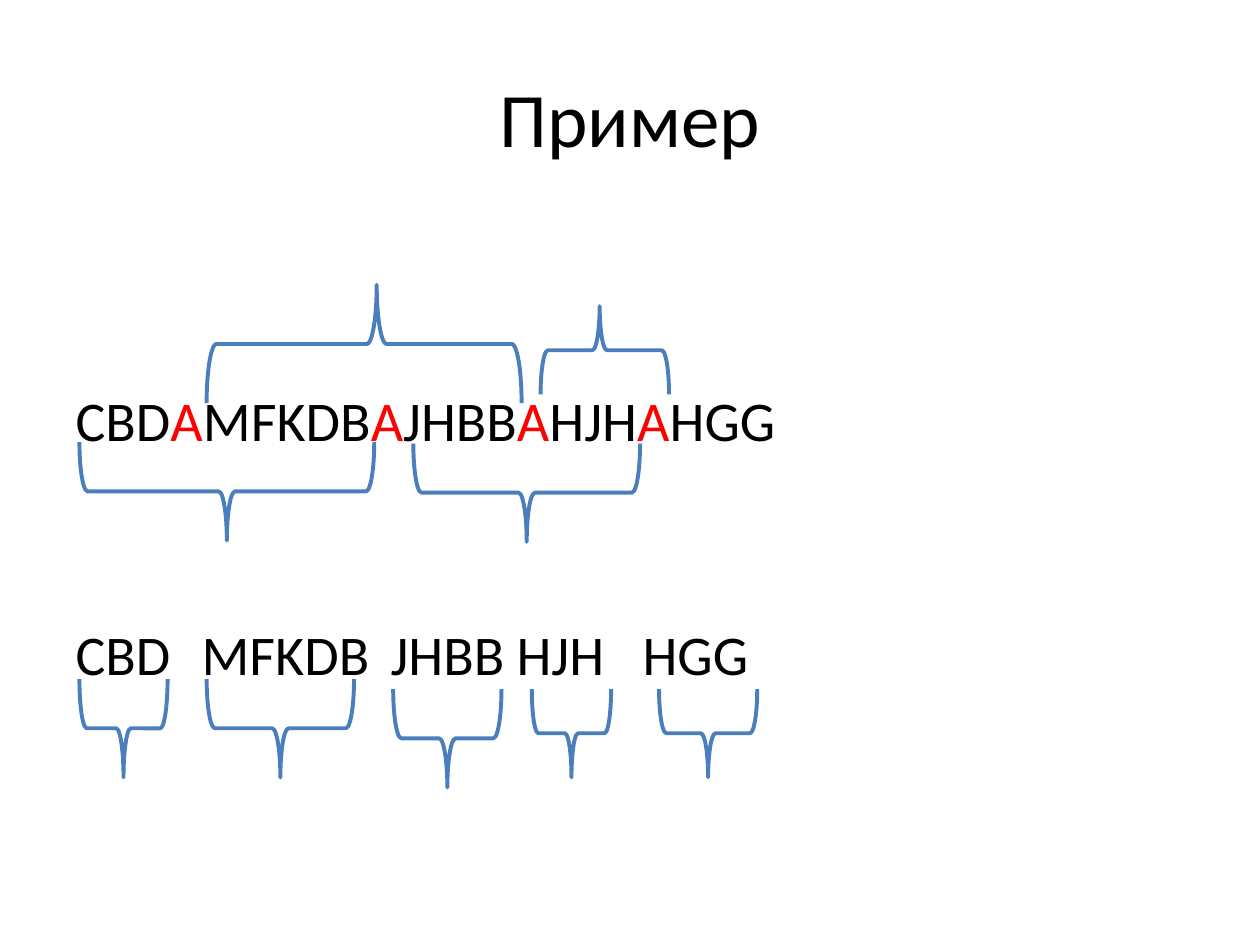
from pptx import Presentation
from pptx.dml.color import RGBColor
from pptx.enum.shapes import MSO_SHAPE
from pptx.enum.text import MSO_ANCHOR, MSO_AUTO_SIZE, PP_ALIGN
from pptx.oxml.ns import qn
from pptx.util import Inches, Pt
from lxml.etree import SubElement

COLORS = {"text": "000000", "separator": "FF0000", "brace": "4B7EBC"}
TITLE = "Пример"
SEPARATOR = "A"
WORDS = ["CBD", "MFKDB", "JHBB", "HJH", "HGG"]
WORD_TABS = [0.94, 2.48, 3.56, 4.56]
SPACE_BETWEEN_LINES = 95.2

DOWN, UP = 90, 270
BRACES = [
    (0.63, 3.51, 2.34, 0.78, DOWN, 0.5),
    (1.64, 2.26, 2.5, 0.94, UP, 0.54),
    (3.28, 3.52, 1.8, 0.78, DOWN, 0.5),
    (4.29, 2.43, 1.02, 0.7, UP, 0.46),
    (0.63, 5.39, 0.7, 0.78, DOWN, 0.5),
    (1.64, 5.39, 1.17, 0.78, DOWN, 0.5),
    (3.12, 5.47, 0.86, 0.78, DOWN, 0.5),
    (4.22, 5.47, 0.63, 0.7, DOWN, 0.5),
    (5.23, 5.47, 0.78, 0.7, DOWN, 0.5),
]


def apply_format(target, values):
    for name, value in values.items():
        setattr(target, name, value)


def place(shape, left, top, width, height):
    apply_format(shape, {
        "left": Inches(left), "top": Inches(top),
        "width": Inches(width), "height": Inches(height),
    })


def add_run(paragraph, text, size, color):
    run = paragraph.add_run()
    run.text = text
    apply_format(run.font, {"size": Pt(size), "name": "Calibri"})
    run.font.color.rgb = RGBColor.from_string(COLORS[color])


def format_plain_line(paragraph, space_before, tabs=()):
    paragraph.space_before = Pt(space_before)
    properties = paragraph._p.get_or_add_pPr()
    properties.set("marL", "0")
    properties.set("indent", "0")
    SubElement(properties, qn("a:buNone"))
    if tabs:
        tab_list = SubElement(properties, qn("a:tabLst"))
        for position in tabs:
            SubElement(tab_list, qn("a:tab"), pos=str(Inches(position)), algn="l")


def add_title(slide):
    title = slide.shapes.title
    place(title, 0.5, 0.3, 9, 1.25)
    title.text_frame.vertical_anchor = MSO_ANCHOR.MIDDLE
    paragraph = title.text_frame.paragraphs[0]
    paragraph.alignment = PP_ALIGN.CENTER
    add_run(paragraph, TITLE, 44, "text")


def add_lines(slide):
    body = slide.placeholders[1]
    place(body, 0.5, 1.75, 9, 4.95)
    frame = body.text_frame
    apply_format(frame, {
        "auto_size": MSO_AUTO_SIZE.NONE, "word_wrap": True,
        "vertical_anchor": MSO_ANCHOR.TOP, "margin_top": Inches(1.31),
    })
    joined = frame.paragraphs[0]
    format_plain_line(joined, 0)
    for index, word in enumerate(WORDS):
        if index:
            add_run(joined, SEPARATOR, 32, "separator")
        add_run(joined, word, 32, "text")
    split = frame.add_paragraph()
    format_plain_line(split, SPACE_BETWEEN_LINES, WORD_TABS)
    add_run(split, "\t".join(WORDS), 32, "text")


def add_brace(slide, left, top, width, height, rotation, tip):
    shift = (width - height) / 2
    brace = slide.shapes.add_shape(
        MSO_SHAPE.RIGHT_BRACE, Inches(left + shift), Inches(top - shift),
        Inches(height), Inches(width))
    brace.rotation = rotation
    brace.adjustments[1] = tip
    brace.shadow.inherit = False
    brace.fill.background()
    brace.line.color.rgb = RGBColor.from_string(COLORS["brace"])
    brace.line.width = Pt(2.25)


def main():
    presentation = Presentation()
    apply_format(presentation, {"slide_width": Inches(10), "slide_height": Inches(7.5)})
    slide = presentation.slides.add_slide(presentation.slide_layouts[1])
    add_title(slide)
    add_lines(slide)
    for brace in BRACES:
        add_brace(slide, *brace)
    presentation.save("out.pptx")


if __name__ == "__main__":
    main()
